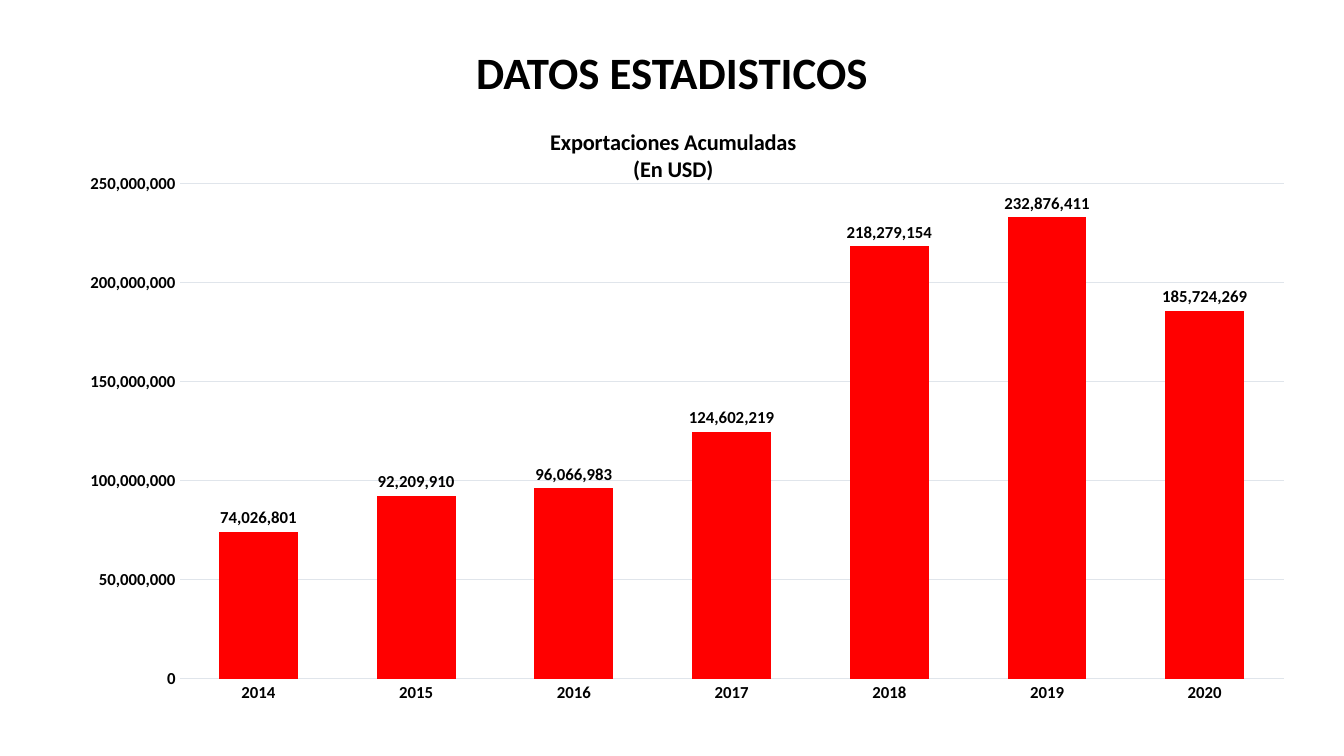
from lxml.etree import SubElement
from pptx import Presentation
from pptx.chart.data import CategoryChartData
from pptx.dml.color import RGBColor
from pptx.enum.chart import XL_CHART_TYPE as ChartType
from pptx.enum.chart import XL_LABEL_POSITION as LabelPosition
from pptx.enum.chart import XL_TICK_MARK as TickMark
from pptx.enum.text import MSO_ANCHOR as Anchor
from pptx.enum.text import PP_ALIGN as Align
from pptx.oxml.ns import qn
from pptx.util import Pt

FONT = "Calibri"
BLACK, RED, GRID = "000000", "FF0000", "E0E5EB"
NUMBER_FORMAT = "#,##0"
EXPORTS = {
    "2014": 74026801,
    "2015": 92209910,
    "2016": 96066983,
    "2017": 124602219,
    "2018": 218279154,
    "2019": 232876411,
    "2020": 185724269,
}


def color(hex_string):
    return RGBColor.from_string(hex_string)


def style_font(font, size, bold=True):
    font.name = FONT
    font.size = Pt(size)
    font.bold = bold
    font.color.rgb = color(BLACK)


def style_line(line):
    line.color.rgb = color(GRID)
    line.width = Pt(0.75)


def place(chart_part, index, **fractions):
    """Insert a manual layout, in fractions of the chart, as child number index."""
    for old_layout in chart_part.findall(qn("c:layout")):
        chart_part.remove(old_layout)
    layout = SubElement(chart_part, qn("c:layout"))
    chart_part.insert(index, layout)
    manual = SubElement(layout, qn("c:manualLayout"))
    settings = {"xMode": "edge", "yMode": "edge", **fractions}
    if "w" in fractions:
        settings = {"layoutTarget": "inner", **settings}
    for tag, value in settings.items():
        SubElement(manual, qn(f"c:{tag}")).set("val", str(value))


def add_heading(slide, text):
    heading = slide.shapes.title
    heading.left, heading.top = Pt(66), Pt(1.5)
    heading.width, heading.height = Pt(828), Pt(104.4)
    frame = heading.text_frame
    frame.text = text
    frame.vertical_anchor = Anchor.MIDDLE
    paragraph = frame.paragraphs[0]
    paragraph.alignment = Align.CENTER
    paragraph.line_spacing = 0.9
    style_font(paragraph.runs[0].font, 32)


def add_chart_title(chart, text):
    chart.has_title = True
    title = chart.chart_title
    title.text_frame.text = text
    for paragraph in title.text_frame.paragraphs:
        paragraph.alignment = Align.CENTER
        style_font(paragraph.runs[0].font, 16)
    title.include_in_layout = False
    place(title._element, 1, x=0.4, y=0.03)


def style_axis(axis):
    axis.major_tick_mark = axis.minor_tick_mark = TickMark.NONE
    style_font(axis.tick_labels.font, 12)


def style_axes(chart):
    years, dollars = chart.category_axis, chart.value_axis
    style_axis(years)
    style_line(years.format.line)
    style_axis(dollars)
    dollars.format.line.fill.background()
    style_line(dollars.major_gridlines.format.line)
    dollars.minimum_scale, dollars.maximum_scale = 0, 250_000_000
    dollars.major_unit = 50_000_000
    dollars.tick_labels.number_format = NUMBER_FORMAT
    dollars.tick_labels.number_format_is_linked = False


def style_bars(plot):
    plot.gap_width, plot.overlap = 100, -24
    plot.vary_by_categories = False
    bars = plot.series[0]
    bars.format.fill.solid()
    bars.format.fill.fore_color.rgb = color(RED)
    bars.invert_if_negative = False
    labels = bars.data_labels
    labels.show_value = True
    labels.position = LabelPosition.OUTSIDE_END
    labels.number_format = NUMBER_FORMAT
    labels.number_format_is_linked = False
    style_font(labels.font, 12)


def add_exports_chart(slide):
    exports = CategoryChartData(number_format=NUMBER_FORMAT)
    exports.categories = list(EXPORTS)
    exports.add_series("Series 1", list(EXPORTS.values()))
    chart = slide.shapes.add_chart(
        ChartType.COLUMN_CLUSTERED, Pt(27.4), Pt(75.6), Pt(908.6), Pt(446.4), exports
    ).chart
    chart.has_legend = False
    style_font(chart.font, 10, bold=False)
    add_chart_title(chart, "Exportaciones Acumuladas\n(En USD)")
    style_axes(chart)
    style_bars(chart.plots[0])
    plot_area = chart._chartSpace.find(f".//{qn('c:plotArea')}")
    place(plot_area, 0, x=0.111, y=0.124, w=0.868, h=0.793)


def main():
    deck = Presentation()
    deck.slide_width, deck.slide_height = Pt(960), Pt(540)
    slide = deck.slides.add_slide(deck.slide_layouts[5])
    add_heading(slide, "DATOS ESTADISTICOS")
    add_exports_chart(slide)
    deck.save("out.pptx")


if __name__ == "__main__":
    main()
